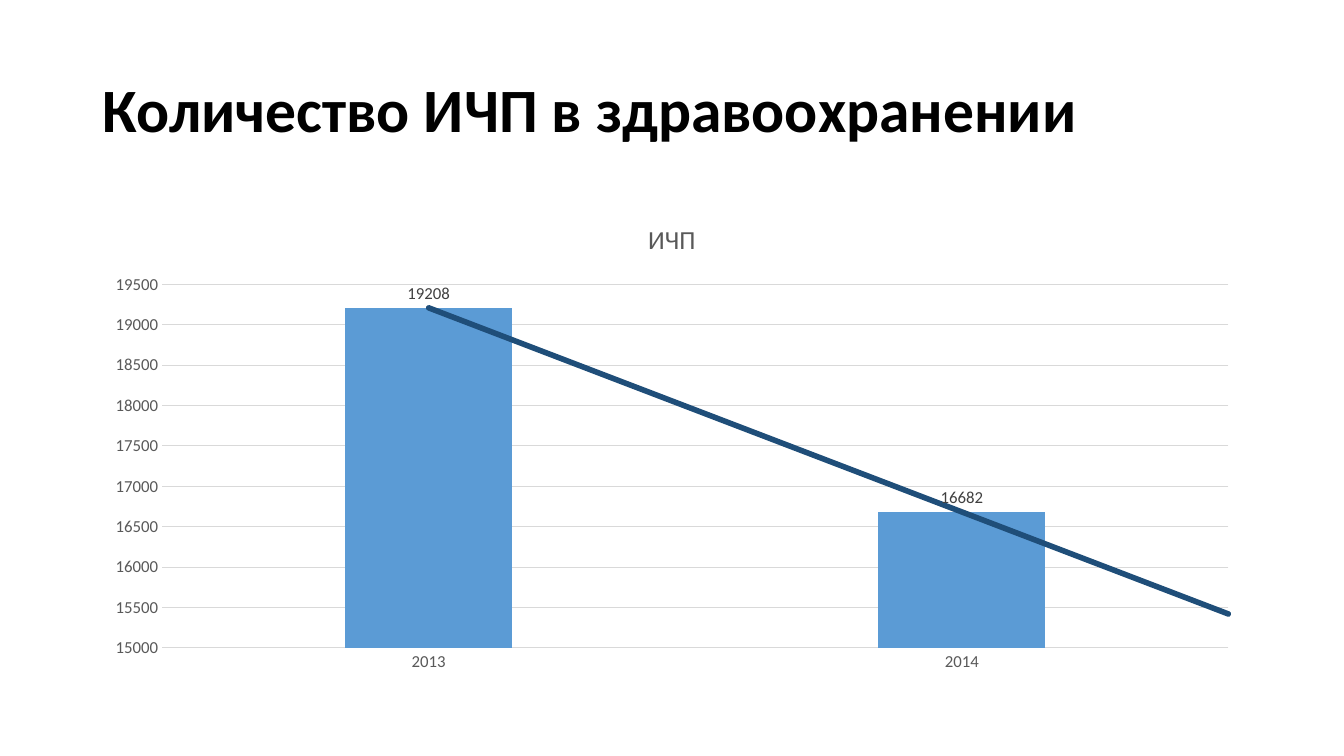
"""Build a slide with a column chart and its linear trend."""
from lxml.etree import SubElement
from pptx import Presentation
from pptx.chart.data import CategoryChartData
from pptx.dml.color import RGBColor
from pptx.enum.chart import XL_CHART_TYPE as ChartType, XL_LABEL_POSITION as LabelPosition
from pptx.enum.chart import XL_TICK_MARK as TickMark
from pptx.enum.text import MSO_ANCHOR as Anchor
from pptx.oxml import parse_xml
from pptx.oxml.ns import nsdecls, qn
from pptx.util import Emu, Pt

HEADING = "Количество ИЧП в здравоохранении"
SERIES_NAME = "ИЧП"
COUNTS = {"2013": 19208, "2014": 16682}
VALUE_RANGE = (15000, 19500, 500)
FONT = "Calibri"
BLACK, GRAY, DARK_GRAY, GRID = "000000", "595959", "404040", "D9D9D9"
BAR_COLOR, TREND_COLOR, TREND_WIDTH = "5B9BD5", "1F4E79", 4
SLIDE_SIZE = (1280, 720)
HEADING_BOX = (88, 38, 1104, 139)
CHART_BOX = (88, 192, 1104, 457)


def px(length):
    return Emu(length * 9525)


def rgb(color):
    return RGBColor.from_string(color)


def style_font(font, size, color, bold=False):
    font.name, font.size, font.bold = FONT, Pt(size), bold
    font.color.rgb = rgb(color)


def style_line(line):
    line.color.rgb = rgb(GRID)
    line.width = Pt(0.75)


def add_heading(slide):
    frame = slide.shapes.add_textbox(*map(px, HEADING_BOX)).text_frame
    frame.word_wrap = True
    frame.vertical_anchor = Anchor.MIDDLE
    paragraph = frame.paragraphs[0]
    paragraph.line_spacing = 0.9
    run = paragraph.add_run()
    run.text = HEADING
    style_font(run.font, 44, BLACK, bold=True)


def add_trend(series):
    trend = parse_xml(
        f'<c:trendline {nsdecls("c", "a")}><c:spPr>'
        f'<a:ln w="{Pt(TREND_WIDTH)}" cap="rnd"><a:solidFill>'
        f'<a:srgbClr val="{TREND_COLOR}"/></a:solidFill></a:ln></c:spPr></c:trendline>'
    )
    settings = {"trendlineType": "linear", "forward": "0.5", "dispRSqr": "0", "dispEq": "0"}
    for tag, value in settings.items():
        SubElement(trend, qn(f"c:{tag}")).set("val", value)
    series._element.find(qn("c:cat")).addprevious(trend)


def add_count_chart(slide):
    data = CategoryChartData()
    data.categories = list(COUNTS)
    data.add_series(SERIES_NAME, list(COUNTS.values()))
    chart = slide.shapes.add_chart(
        ChartType.COLUMN_CLUSTERED, *map(px, CHART_BOX), data
    ).chart
    style_font(chart.font, 10, BLACK)
    chart.has_legend = False
    chart.has_title = True
    title_run = chart.chart_title.text_frame.paragraphs[0].add_run()
    title_run.text = SERIES_NAME
    style_font(title_run.font, 18.6, GRAY)

    for axis in (chart.category_axis, chart.value_axis):
        axis.major_tick_mark = axis.minor_tick_mark = TickMark.NONE
        style_font(axis.tick_labels.font, 12, GRAY)
    style_line(chart.category_axis.format.line)
    value_axis = chart.value_axis
    value_axis.minimum_scale, value_axis.maximum_scale, value_axis.major_unit = VALUE_RANGE
    value_axis.format.line.fill.background()
    style_line(value_axis.major_gridlines.format.line)

    plot = chart.plots[0]
    plot.gap_width, plot.overlap, plot.vary_by_categories = 219, -27, False
    series = plot.series[0]
    series.format.fill.solid()
    series.format.fill.fore_color.rgb = rgb(BAR_COLOR)
    labels = series.data_labels
    labels.show_value = True
    labels.position = LabelPosition.OUTSIDE_END
    style_font(labels.font, 12, DARK_GRAY)
    add_trend(series)


def main():
    presentation = Presentation()
    presentation.slide_width, presentation.slide_height = map(px, SLIDE_SIZE)
    slide = presentation.slides.add_slide(presentation.slide_layouts[6])
    add_heading(slide)
    add_count_chart(slide)
    presentation.save("out.pptx")


if __name__ == "__main__":
    main()
